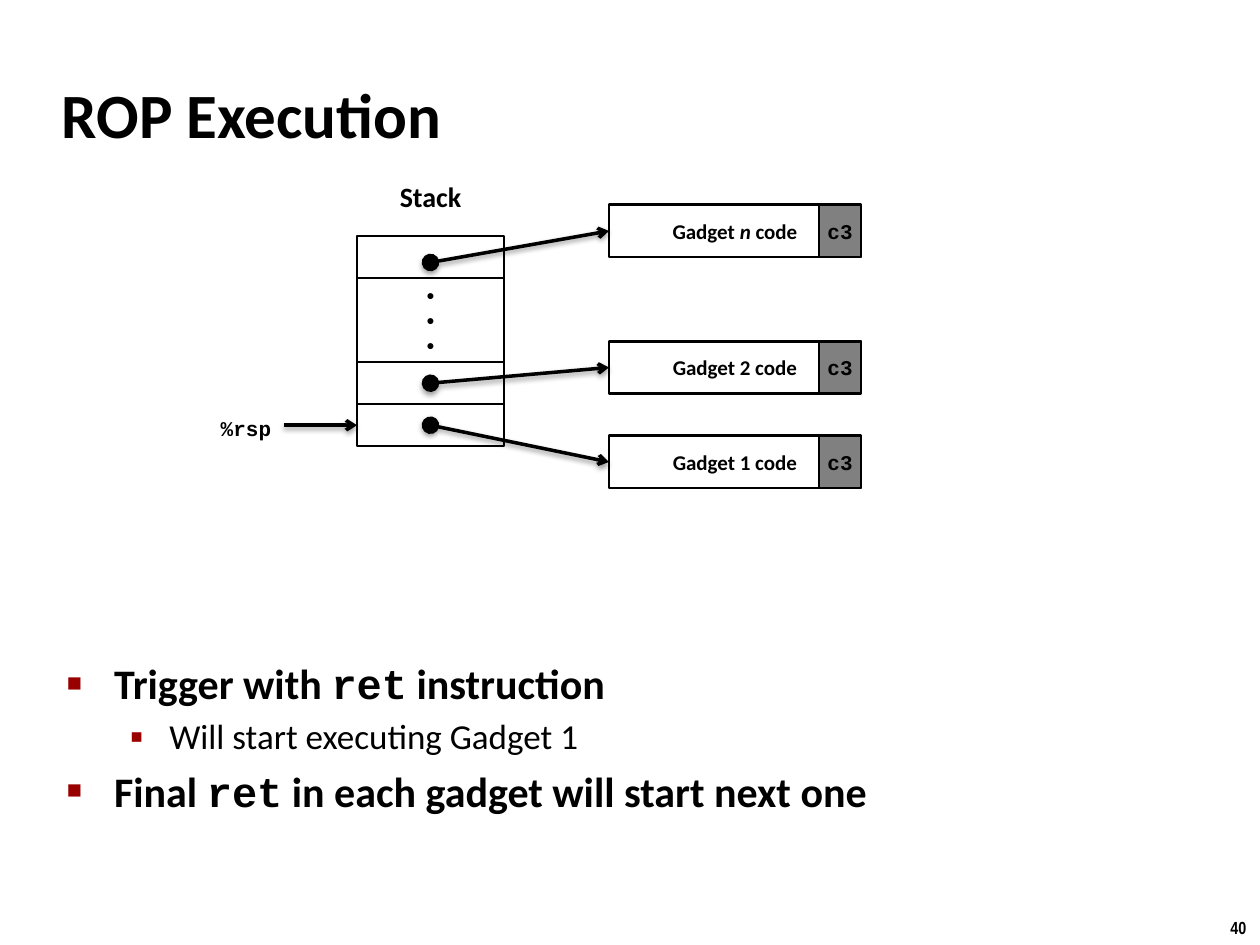
"""Build the ROP Execution slide: a stack of pointers into gadget code."""
import pptx
import pptx.dml.color
import pptx.enum.shapes
import pptx.enum.text
import pptx.oxml
import pptx.oxml.ns
import pptx.util

Pt = pptx.util.Pt
ALIGN = pptx.enum.text.PP_ALIGN
ANCHOR = pptx.enum.text.MSO_ANCHOR
BLACK = pptx.dml.color.RGBColor(0, 0, 0)
GRAY = pptx.dml.color.RGBColor(0x80, 0x80, 0x80)
BULLET_RED = pptx.dml.color.RGBColor(0x99, 0, 0)
SANS, MONO = "Calibri", "Courier New"

TITLE = "ROP Execution"
BULLETS = [
    (0, [("Trigger with ", SANS), ("ret", MONO), (" instruction", SANS)]),
    (1, [("Will start executing Gadget 1", SANS)]),
    (0, [("Final ", SANS), ("ret", MONO), (" in each gadget will start next one", SANS)]),
]
LEVELS = [
    dict(size=24, bold=True, margin=27, hang=27, char="■", percent=60),
    dict(size=20, bold=False, margin=58.5, hang=22.5, char="▪", percent=110),
]
GADGETS = [
    (249, 243, [("Gadget 1 code", False)]),
    (195, 219, [("Gadget 2 code", False)]),
    (117, 150, [("Gadget ", False), ("n", True), (" code", False)]),
]
STACK_LEFT, STACK_TOP, STACK_WIDTH, ROW = 204, 135, 84, 24
STACK_ROWS = [1, 2, 1, 1]
GADGET_LEFT, GADGET_WIDTH, GADGET_HEIGHT, RET_WIDTH = 348, 144, 30, 24


def place(shape, left, top, width, height):
    shape.left, shape.top, shape.width, shape.height = map(Pt, (left, top, width, height))


def add_span(para, text, size, font=SANS, bold=True, italic=False):
    span = para.add_run()
    span.text = text
    span.font.size, span.font.name = Pt(size), font
    span.font.bold, span.font.italic = bold, italic
    span.font.color.rgb = BLACK


def add_label(page, area, text, size, font, align, anchor=ANCHOR.TOP, wrap=True):
    box = page.shapes.add_textbox(*map(Pt, area))
    box.text_frame.word_wrap = wrap
    box.text_frame.vertical_anchor = anchor
    para = box.text_frame.paragraphs[0]
    para.alignment = align
    add_span(para, text, size, font)


def add_box(page, area, weight=1, fill=None):
    box = page.shapes.add_shape(pptx.enum.shapes.MSO_SHAPE.RECTANGLE, *map(Pt, area))
    box.shadow.inherit = False
    if fill is None:
        box.fill.background()
    else:
        box.fill.solid()
        box.fill.fore_color.rgb = fill
    box.line.color.rgb = BLACK
    box.line.width = Pt(weight)
    box.text_frame.vertical_anchor = ANCHOR.MIDDLE
    box.text_frame.paragraphs[0].alignment = ALIGN.CENTER
    return box


def add_arrow(page, start, target, dotted):
    end = target.left, target.top + target.height // 2
    arrow = page.shapes.add_connector(
        pptx.enum.shapes.MSO_CONNECTOR.STRAIGHT, *map(Pt, start), *end)
    arrow.end_connect(target, 1)
    arrow.line.color.rgb = BLACK
    arrow.line.width = Pt(2)
    namespace = pptx.oxml.ns.nsdecls("a")
    line = arrow.line._get_or_add_ln()
    if dotted:
        line.append(pptx.oxml.parse_xml(f'<a:headEnd {namespace} type="oval" w="lg" len="lg"/>'))
    line.append(pptx.oxml.parse_xml(f'<a:tailEnd {namespace} type="arrow"/>'))
    arrow._element.spPr.append(pptx.oxml.parse_xml(
        f'<a:effectLst {namespace}><a:outerShdw blurRad="{Pt(3.1)}" dist="{Pt(1.6)}" '
        'dir="5400000" rotWithShape="0"><a:srgbClr val="000000"><a:alpha val="38000"/>'
        '</a:srgbClr></a:outerShdw></a:effectLst>'))


def set_bullet(para, style):
    properties = para._p.get_or_add_pPr()
    properties.set("marL", str(Pt(style["margin"])))
    properties.set("indent", str(-Pt(style["hang"])))
    namespace = pptx.oxml.ns.nsdecls("a")
    for xml in (
        f'<a:buClr {namespace}><a:srgbClr val="{BULLET_RED}"/></a:buClr>',
        f'<a:buSzPct {namespace} val="{style["percent"] * 1000}"/>',
        f'<a:buFont {namespace} typeface="Arial"/>',
        f'<a:buChar {namespace} char="{style["char"]}"/>',
    ):
        properties.append(pptx.oxml.parse_xml(xml))


def add_title_and_bullets(page):
    title, body = page.shapes.title, page.placeholders[1]
    place(title, 28, 34.5, 597.5, 60)
    place(body, 31, 372, 622, 127)
    for holder, anchor in ((title, ANCHOR.MIDDLE), (body, ANCHOR.TOP)):
        holder.text_frame.auto_size = pptx.enum.text.MSO_AUTO_SIZE.NONE
        holder.text_frame.vertical_anchor = anchor
    heading = title.text_frame.paragraphs[0]
    heading.alignment = ALIGN.LEFT
    add_span(heading, TITLE, 36)
    for index, (level, spans) in enumerate(BULLETS):
        frame = body.text_frame
        para = frame.add_paragraph() if index else frame.paragraphs[0]
        style = LEVELS[level]
        para.level = level
        para.space_before = Pt(style["size"] * 0.2)
        set_bullet(para, style)
        for text, font in spans:
            add_span(para, text, style["size"], font, style["bold"])


def add_stack(page):
    top, rows = STACK_TOP, []
    for units in STACK_ROWS:
        rows.append(add_box(page, (STACK_LEFT, top, STACK_WIDTH, units * ROW)))
        top += units * ROW
    frame = rows[1].text_frame
    frame.margin_top = frame.margin_bottom = 0
    frame.word_wrap = False
    for index in range(3):
        para = frame.add_paragraph() if index else frame.paragraphs[0]
        para.alignment = ALIGN.CENTER
        add_span(para, "•", 12, "Arial")
    return rows[-1]


def add_gadget(page, top, spans):
    ret_left = GADGET_LEFT + GADGET_WIDTH - RET_WIDTH
    ret = add_box(page, (ret_left, top, RET_WIDTH, GADGET_HEIGHT), fill=GRAY)
    ret.text_frame.margin_left = ret.text_frame.margin_right = 0
    add_span(ret.text_frame.paragraphs[0], "c3", 12, MONO)
    code = add_box(page, (GADGET_LEFT, top, GADGET_WIDTH, GADGET_HEIGHT), 1.5)
    for text, italic in spans:
        add_span(code.text_frame.paragraphs[0], text, 12, italic=italic)
    return code


def main():
    deck = pptx.Presentation()
    deck.slide_width, deck.slide_height = Pt(720), Pt(540)
    page = deck.slides.add_slide(deck.slide_layouts[1])
    add_title_and_bullets(page)
    bottom_row = add_stack(page)
    codes = [add_gadget(page, top, spans) for top, _, spans in GADGETS]
    for code, (_, pointer, _) in zip(codes, GADGETS):
        add_arrow(page, (STACK_LEFT + STACK_WIDTH / 2, pointer), code, True)
    add_arrow(page, (162, 243), bottom_row, False)
    add_label(page, (STACK_LEFT, 99, STACK_WIDTH, 27), "Stack", 16, SANS, ALIGN.CENTER)
    add_label(page, (78, 232.5, 84, 24), "%rsp", 12, MONO, ALIGN.RIGHT, ANCHOR.MIDDLE)
    add_label(page, (696, 520.5, 24.5, 19.5), "40", 10, "Arial Narrow", ALIGN.LEFT, wrap=False)
    deck.save("out.pptx")


if __name__ == "__main__":
    main()
